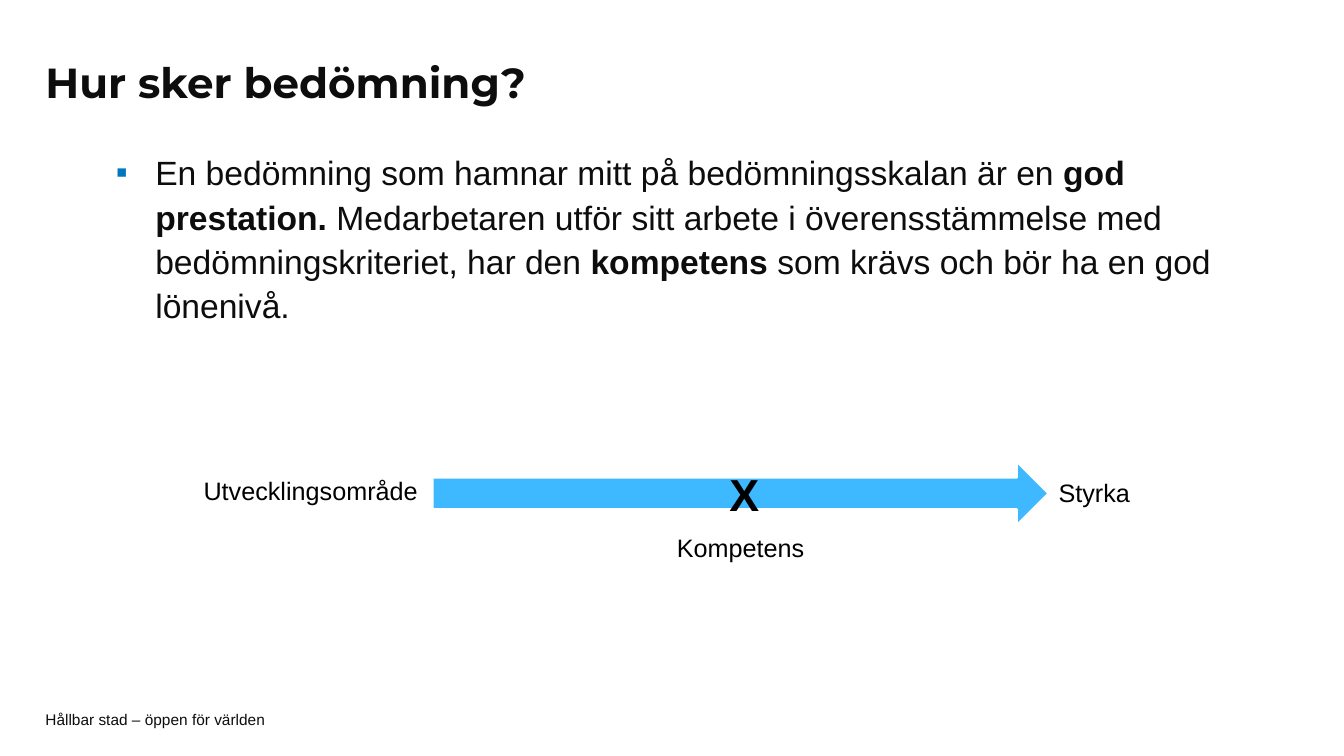
from lxml import etree
from pptx import Presentation, util as u
from pptx.dml.color import RGBColor
from pptx.enum import shapes, text
from pptx.oxml import ns

WIDTH, HEIGHT = 13.33, 7.5
MARGIN = 0.45
INK, BLACK, WHITE = "0D0D0D", "000000", "FFFFFF"
BULLET_BLUE, ARROW_BLUE = "0077BC", "3EB8FF"


def color(hex_value):
    """Turn a hex string into a colour."""
    return RGBColor.from_string(hex_value)


def place(part, box):
    """Move a part to a box given in inches."""
    part.left, part.top, part.width, part.height = map(u.Inches, box)


def set_frame(frame, anchor, insets):
    """Set wrapping, anchor and insets (sides, ends) of a text frame."""
    sides, ends = map(u.Inches, insets)
    frame.word_wrap = True
    frame.auto_size = text.MSO_AUTO_SIZE.NONE
    frame.vertical_anchor = anchor
    frame.margin_left = frame.margin_right = sides
    frame.margin_top = frame.margin_bottom = ends


def add_run(paragraph, words, size, ink=INK, bold=False, face="Arial"):
    """Append one formatted run."""
    run = paragraph.add_run()
    run.text = words
    run.font.name, run.font.size, run.font.bold = face, u.Pt(size), bold
    run.font.color.rgb = color(ink)


def add_label(slide, box, words, size, ink=BLACK, bold=False,
              anchor=text.MSO_ANCHOR.TOP, insets=(0.1, 0.05)):
    """Add a one-line text box."""
    label = slide.shapes.add_textbox(*map(u.Inches, box))
    set_frame(label.text_frame, anchor, insets)
    add_run(label.text_frame.paragraphs[0], words, size, ink, bold)


def add_block(slide, kind, box, fill):
    """Add a flat shape with a white outline."""
    block = slide.shapes.add_shape(kind, *map(u.Inches, box))
    block.shadow.inherit = False
    block.fill.solid()
    block.fill.fore_color.rgb = color(fill)
    block.line.color.rgb = color(WHITE)
    block.line.width = u.Pt(1.5)
    return block


def add_title(slide, box):
    """Fill the title placeholder."""
    title = slide.shapes.title
    place(title, box)
    set_frame(title.text_frame, text.MSO_ANCHOR.MIDDLE, (0, 0.05))
    heading = title.text_frame.paragraphs[0]
    heading.alignment = text.PP_ALIGN.LEFT
    heading.line_spacing = 0.9
    add_run(heading, "Hur sker bedömning?", 30, bold=True, face="Montserrat")


def add_explanation(slide, box):
    """Add the bulleted explanation of a good performance."""
    explanation = slide.shapes.add_textbox(*map(u.Inches, box))
    set_frame(explanation.text_frame, text.MSO_ANCHOR.TOP, (0, 0))
    point = explanation.text_frame.paragraphs[0]
    point.line_spacing = 1.1
    point.space_after = u.Pt(3)
    properties = point._p.get_or_add_pPr()
    indent = u.Inches(0.39)
    properties.set("marL", str(indent))
    properties.set("indent", str(-indent))
    bullet_color = etree.SubElement(properties, ns.qn("a:buClr"))
    etree.SubElement(bullet_color, ns.qn("a:srgbClr"), val=BULLET_BLUE)
    etree.SubElement(properties, ns.qn("a:buFont"), typeface="Arial")
    etree.SubElement(properties, ns.qn("a:buChar"), char="▪")
    for words, bold in (
        ("En bedömning som hamnar mitt på bedömningsskalan är en ", False),
        ("god prestation. ", True),
        ("Medarbetaren utför sitt arbete i överensstämmelse med "
         "bedömningskriteriet, har den ", False),
        ("kompetens", True),
        (" som krävs och bör ha en god lönenivå.", False),
    ):
        add_run(point, words, 24, bold=bold)


def add_scale(slide, box):
    """Draw the assessment scale with its ends and its middle mark."""
    left, top, width, height = box
    middle = left + width / 2
    add_label(slide, (left - 2.37, top + 0.09, 2.45, 0.4), "Utvecklingsområde", 18)
    add_label(slide, (left + width, top + 0.11, 1.01, 0.4), "Styrka", 18)
    add_block(slide, shapes.MSO_SHAPE.RIGHT_ARROW, box, ARROW_BLUE)
    add_label(slide, (middle - 0.21, top, 0.43, 0.64), "X", 32, bold=True)
    competence = add_block(slide, shapes.MSO_SHAPE.RECTANGLE,
                           (middle - 0.85, top + 0.67, 1.7, 0.37), WHITE)
    set_frame(competence.text_frame, text.MSO_ANCHOR.MIDDLE, (0.1, 0.05))
    caption = competence.text_frame.paragraphs[0]
    caption.alignment = text.PP_ALIGN.CENTER
    add_run(caption, "Kompetens", 18, BLACK)


def main():
    """Build and save the slide."""
    deck = Presentation()
    deck.slide_width, deck.slide_height = u.Inches(WIDTH), u.Inches(HEIGHT)
    slide = deck.slides.add_slide(deck.slide_layouts[5])
    add_label(slide, (MARGIN, HEIGHT - 0.44, 9.45, 0.16),
              "Hållbar stad – öppen för världen", 11, INK,
              anchor=text.MSO_ANCHOR.MIDDLE, insets=(0, 0))
    add_title(slide, (MARGIN, 0.44, 10.03, 0.81))
    add_explanation(slide, (1.15, 1.47, 11.02, 5.27))
    add_scale(slide, (4.29, 4.58, 6.11, 0.63))
    deck.save("out.pptx")


if __name__ == "__main__":
    main()
